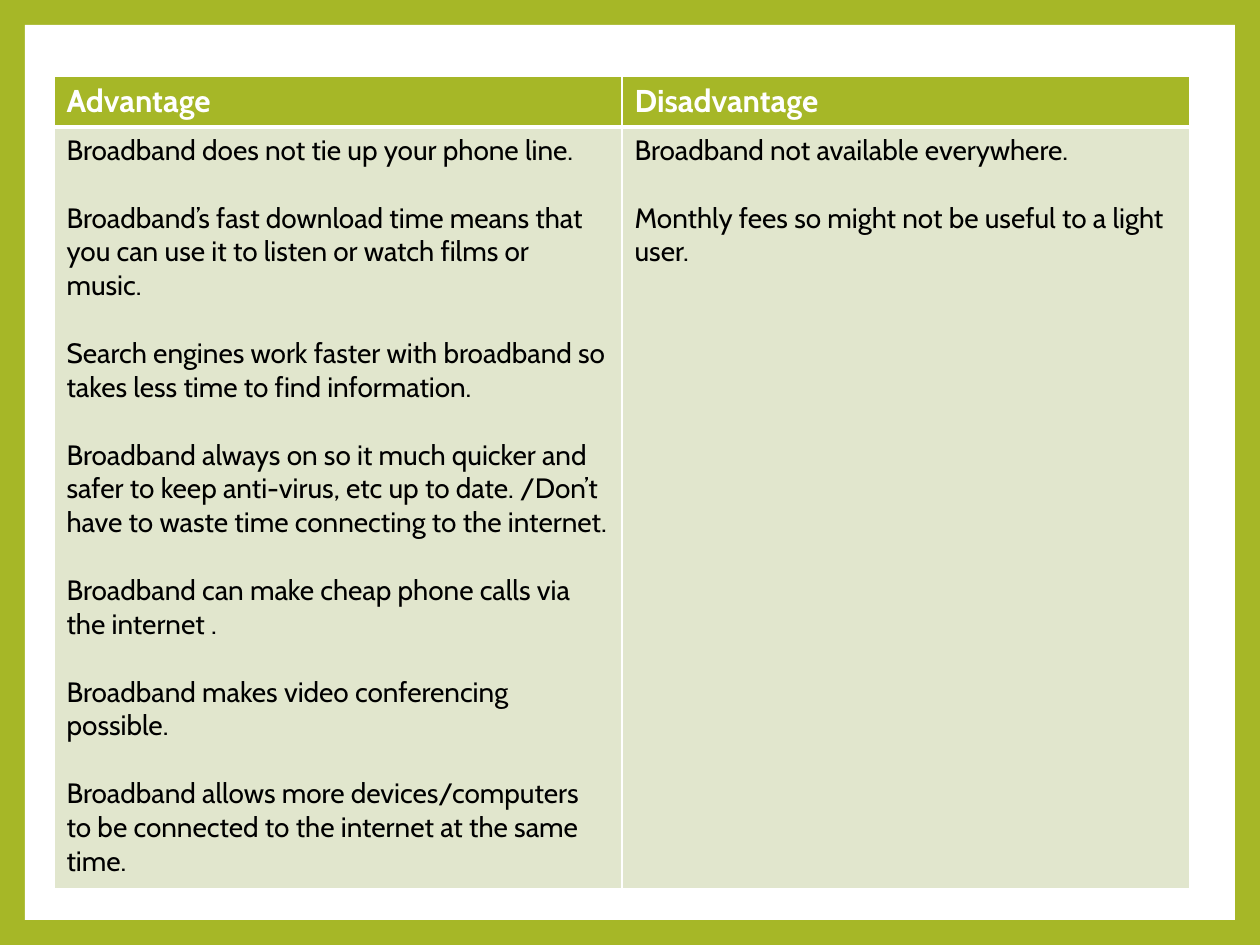
"""Builds a slide with a table of broadband advantages and disadvantages."""
from lxml import etree
from pptx import Presentation
from pptx.dml.color import RGBColor
from pptx.enum.shapes import MSO_SHAPE
from pptx.oxml.ns import qn
from pptx.util import Pt

RECTANGLE = MSO_SHAPE.RECTANGLE
EMU_PER_PX = 914400 / 126
COLORS = {"green": "A6B727", "pale": "E1E6CD", "white": "FFFFFF", "black": "000000"}
HEADER = {"font": {"name": "Cabin", "size": Pt(18), "bold": True},
          "color": "white", "fill": "green", "gap": Pt(0),
          "borders": {"L": 1, "R": 1, "T": 1, "B": 3}}
BODY = {"font": {"name": "Cabin", "size": Pt(16), "bold": False},
        "color": "black", "fill": "pale", "gap": Pt(19.4),
        "borders": {"L": 1, "R": 1, "T": 3, "B": 1}}
COLUMNS = {
    "Advantage": [
        "Broadband does not tie up your phone line.",
        "Broadband’s fast download time means that you can use it to listen or watch films or music.",
        "Search engines work faster with broadband so takes less time to find information.",
        "Broadband always on so it much quicker and safer to keep anti-virus, etc up to date. "
        "/Don’t have to waste time connecting to the internet.",
        "Broadband can make cheap phone calls via the internet .",
        "Broadband makes video conferencing possible.",
        "Broadband allows more devices/computers to be connected to the internet at the same time.",
    ],
    "Disadvantage": [
        "Broadband not available everywhere.",
        "Monthly fees so might not be useful to a light user.",
    ],
}


def px(length):
    return round(length * EMU_PER_PX)


def rgb(color):
    return RGBColor.from_string(COLORS[color])


class SlideBuilder:
    def __init__(self, slide):
        self.slide = slide

    def background(self, color):
        fill = self.slide.background.fill
        fill.solid()
        fill.fore_color.rgb = rgb(color)

    def panel(self, left, top, width, height, color):
        shape = self.slide.shapes.add_shape(RECTANGLE, *map(px, (left, top, width, height)))
        shape.shadow.inherit = False
        shape.fill.solid()
        shape.fill.fore_color.rgb = rgb(color)
        shape.line.fill.background()

    def borders(self, cell, widths):
        properties = cell._tc.get_or_add_tcPr()
        for index, (side, width) in enumerate(widths.items()):
            line = etree.Element(qn(f"a:ln{side}"), w=str(Pt(width)))
            fill = etree.SubElement(line, qn("a:solidFill"))
            etree.SubElement(fill, qn("a:srgbClr"), val=COLORS["white"])
            properties.insert(index, line)

    def cell(self, cell, texts, style):
        cell.fill.solid()
        cell.fill.fore_color.rgb = rgb(style["fill"])
        self.borders(cell, style["borders"])
        frame = cell.text_frame
        for index, text in enumerate(texts):
            paragraph = frame.add_paragraph() if index else frame.paragraphs[0]
            if index:
                paragraph.space_before = style["gap"]
            font = paragraph.add_run().font
            paragraph.runs[0].text = text
            for name, value in style["font"].items():
                setattr(font, name, value)
            font.color.rgb = rgb(style["color"])

    def table(self, left, top, column_width, row_heights, columns):
        size = column_width * len(columns), sum(row_heights)
        table = self.slide.shapes.add_table(
            len(row_heights), len(columns), *map(px, (left, top, *size))).table
        for row, height in zip(table.rows, row_heights):
            row.height = px(height)
        for index, (heading, texts) in enumerate(columns.items()):
            table.columns[index].width = px(column_width)
            self.cell(table.cell(0, index), [heading], HEADER)
            self.cell(table.cell(1, index), texts, BODY)


def main():
    presentation = Presentation()
    presentation.slide_width, presentation.slide_height = px(1260), px(945)
    slide = presentation.slides.add_slide(presentation.slide_layouts[6])
    builder = SlideBuilder(slide)
    builder.background("green")
    builder.panel(25, 25, 1210, 895, "white")
    builder.table(54, 76, 568, (50, 762), COLUMNS)
    presentation.save("out.pptx")


if __name__ == "__main__":
    main()
